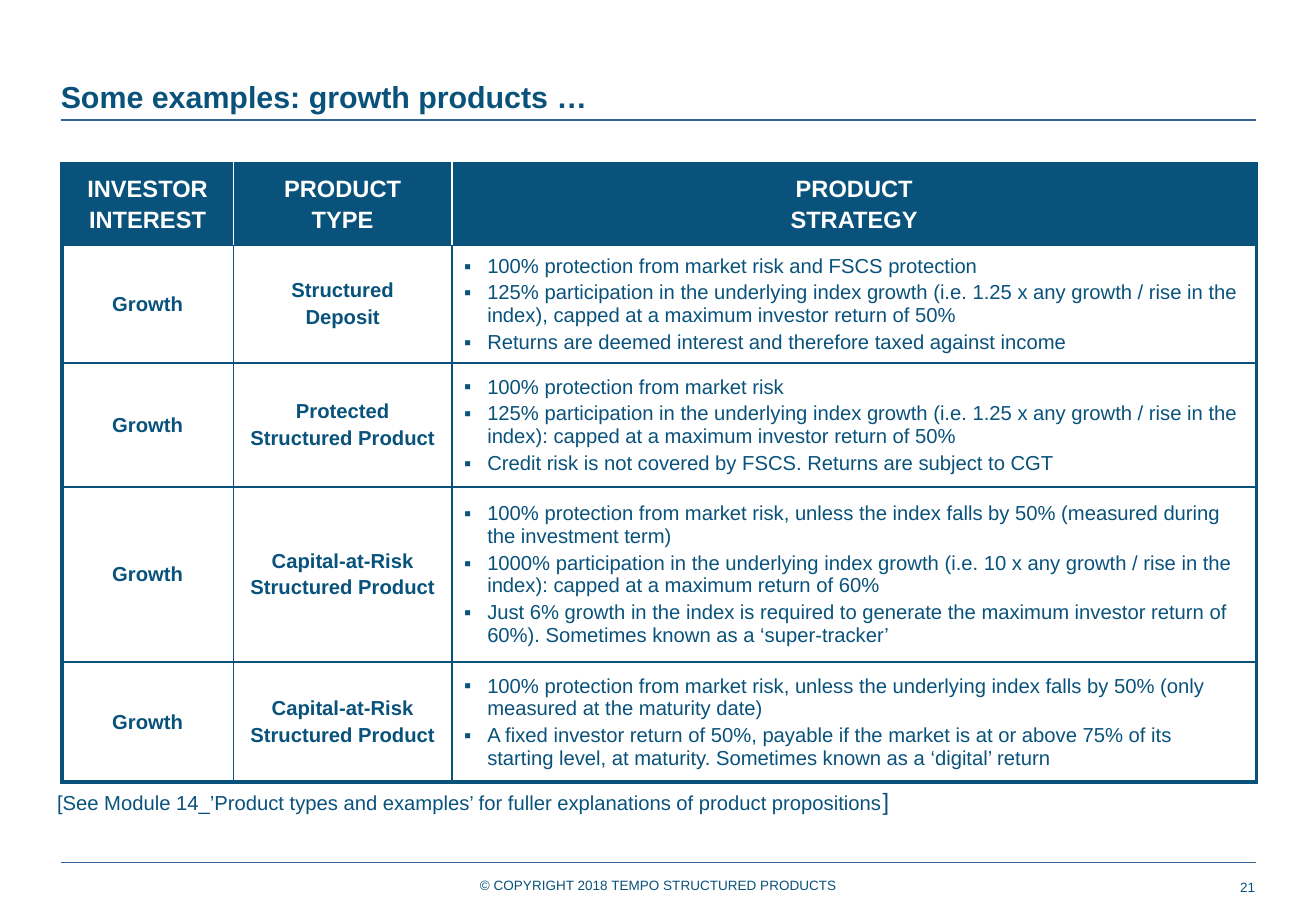
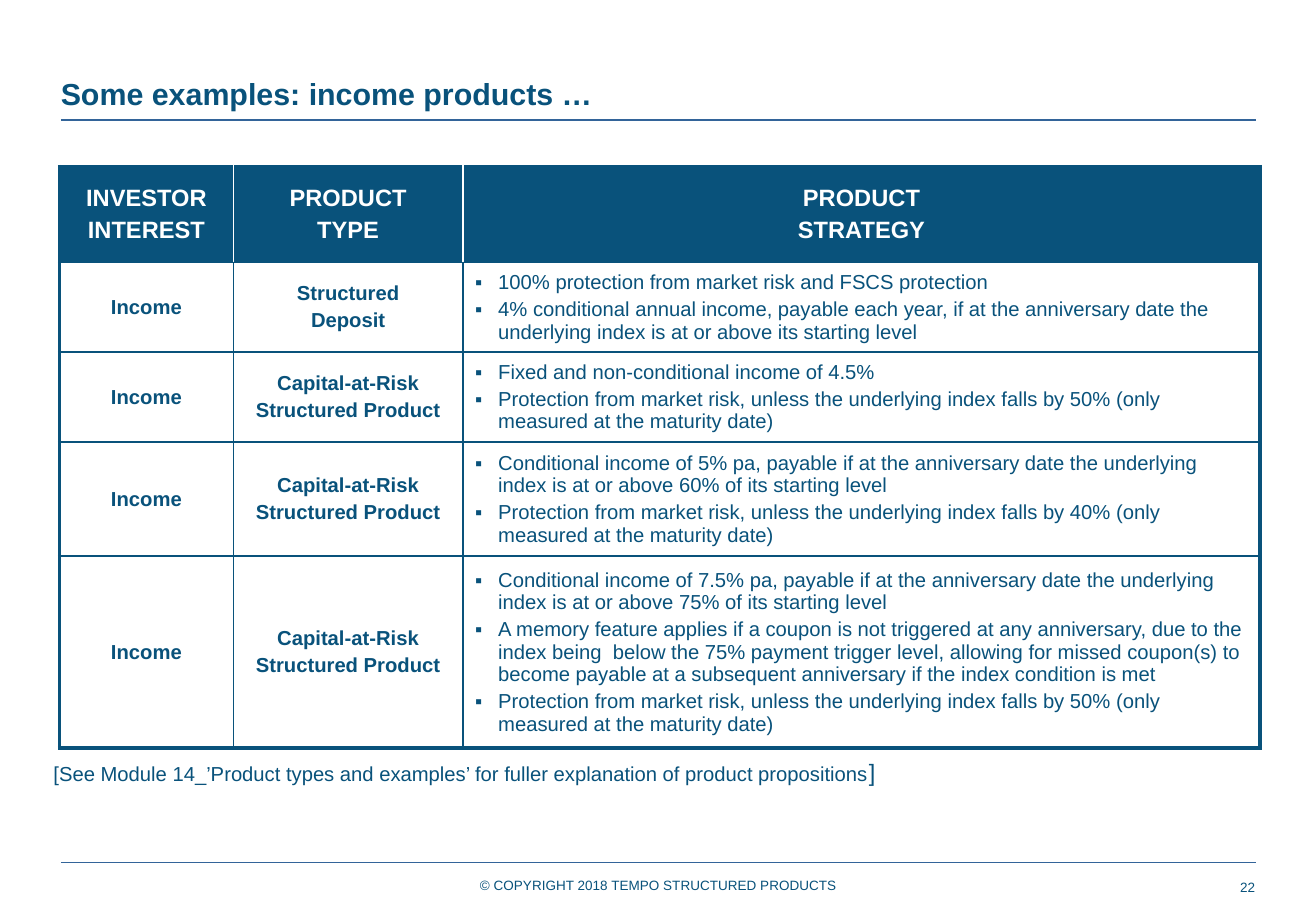
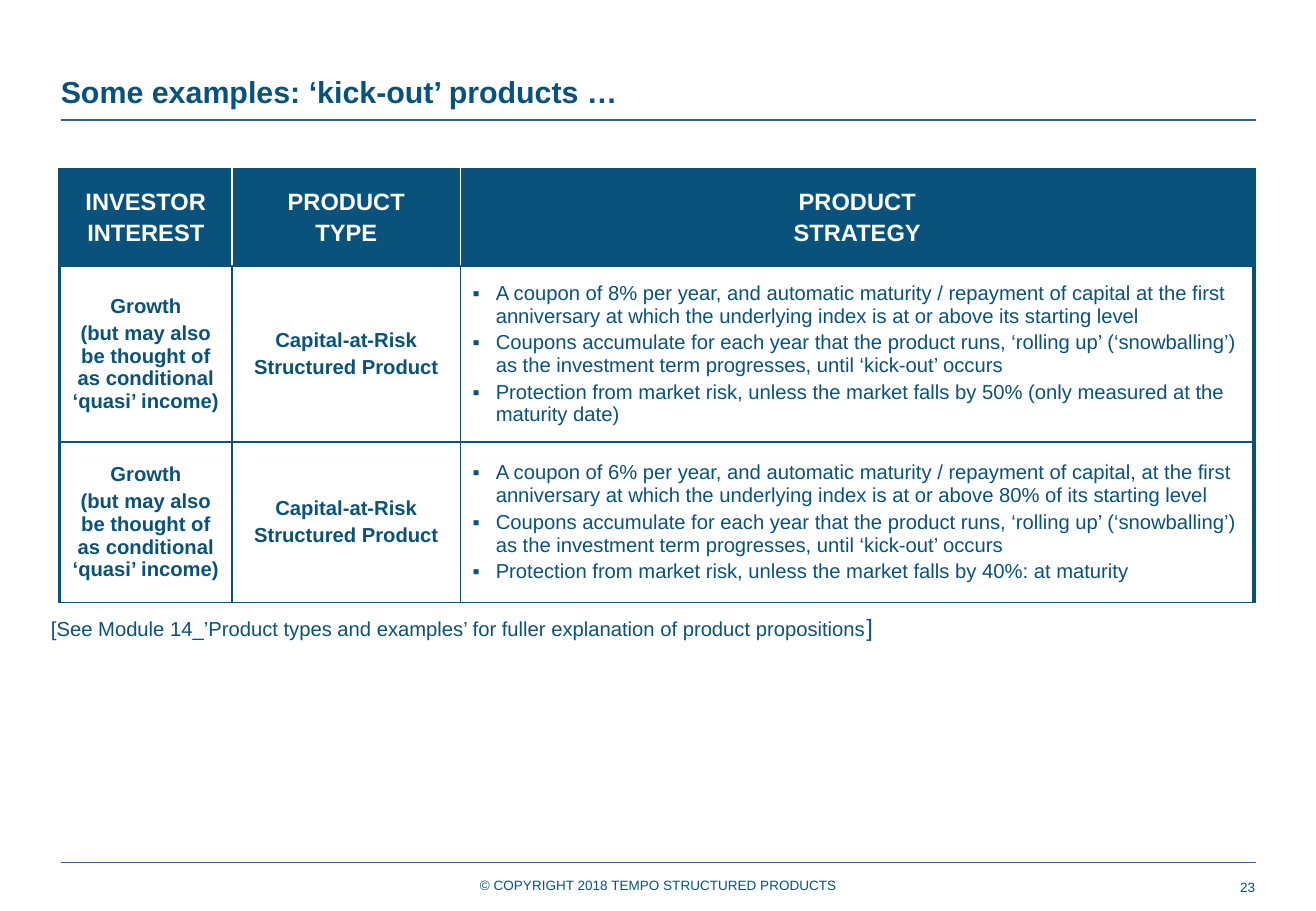
from dataclasses import dataclass

from lxml import etree
from pptx import Presentation
from pptx import util as u
from pptx.dml.color import RGBColor
from pptx.enum import shapes, text
from pptx.oxml.ns import qn


@dataclass(frozen=True)
class Theme:
    font: str = "Arial"
    navy: str = "09527B"
    rule: str = "336499"
    white: str = "FFFFFF"
    title: float = 18
    header: float = 14
    body: float = 12
    footer: float = 8
    thin: float = 1
    thick: float = 2.25
    before: float = 0.2     # space before a paragraph, as a share of its size
    indent: float = 1.9     # hanging indent of a bullet, in grid steps


THEME = Theme()
STEP = u.Inches(0.1)        # one column or row of the grid
LEFT, RIGHT = 5, 103.4      # page margins, in columns
COPYRIGHT = "© COPYRIGHT 2018 TEMPO STRUCTURED PRODUCTS"


def grid(*steps):
    return [round(step * STEP) for step in steps]


def apply(target, **values):
    for name, value in values.items():
        setattr(target, name, value)


class Deck:
    """Holds the theme and the slide being built."""

    def __init__(self, theme):
        self.theme = theme
        self.show = Presentation()
        apply(self.show, slide_width=u.Inches(10.83), slide_height=u.Inches(7.5))
        self.slide = None

    def new_slide(self, title, title_top, number):
        self.slide = self.show.slides.add_slide(self.show.slide_layouts[5])
        self.title(title, title_top)
        for row in (9.9, 71):
            self.rule(row)
        self.text((96.5, 72.2, 6.8, 1.6), str(number), self.theme.footer,
                  align=text.PP_ALIGN.RIGHT, anchor=text.MSO_ANCHOR.MIDDLE)
        self.text((39.5, 72.2, 29.6, 1.4), COPYRIGHT, self.theme.footer)

    def run(self, paragraph, words, size, color=None, bold=False):
        run = paragraph.add_run()
        run.text = words
        apply(run.font, name=self.theme.font, size=u.Pt(size), bold=bold)
        run.font.color.rgb = RGBColor.from_string(color or self.theme.navy)

    def frame(self, frame, anchor=text.MSO_ANCHOR.TOP):
        apply(frame, margin_left=0, margin_top=0, margin_right=0, margin_bottom=0,
              word_wrap=True, auto_size=text.MSO_AUTO_SIZE.NONE,
              vertical_anchor=anchor)
        return frame.paragraphs[0]

    def title(self, words, top):
        holder = self.slide.shapes.title
        left, top, width, height = grid(LEFT, top, 89, 3)
        apply(holder, left=left, top=top, width=width, height=height)
        paragraph = self.frame(holder.text_frame)
        paragraph.alignment = text.PP_ALIGN.LEFT
        self.run(paragraph, words, self.theme.title, bold=True)

    def text(self, place, words, size, align=text.PP_ALIGN.LEFT,
             anchor=text.MSO_ANCHOR.TOP):
        box = self.slide.shapes.add_textbox(*grid(*place))
        paragraph = self.frame(box.text_frame, anchor)
        paragraph.alignment = align
        self.run(paragraph, words, size)
        return paragraph

    def rule(self, row):
        line = self.slide.shapes.add_connector(
            shapes.MSO_CONNECTOR.STRAIGHT, *grid(LEFT, row, RIGHT, row))
        line.line.color.rgb = RGBColor.from_string(self.theme.rule)
        line.line.width = u.Pt(self.theme.thin)
        etree.SubElement(line._element.spPr, qn("a:effectLst"))

    def note(self, left, top, noun):
        words = f"[See Module 14_’Product types and examples’ for fuller {noun} of product propositions"
        paragraph = self.text((left, top, 96, 2.4), words, self.theme.body)
        self.run(paragraph, "]", self.theme.header)

    def borders(self, cell, **sides):
        properties = cell._tc.get_or_add_tcPr()
        for side, (color, width) in sides.items():
            line = etree.SubElement(properties, qn(f"a:ln{side}"), w=str(u.Pt(width)))
            fill = etree.SubElement(line, qn("a:solidFill"))
            etree.SubElement(fill, qn("a:srgbClr"), val=color)

    def bullet(self, paragraph):
        properties = paragraph._p.get_or_add_pPr()
        indent, = grid(self.theme.indent)
        properties.set("marL", str(indent))
        properties.set("indent", str(-indent))
        etree.SubElement(properties, qn("a:buFont"), typeface=self.theme.font)
        etree.SubElement(properties, qn("a:buChar"), char="▪")

    def cell(self, cell, lines, header, bulleted):
        theme = self.theme
        size = theme.header if header else theme.body
        cell.fill.solid()
        cell.fill.fore_color.rgb = RGBColor.from_string(
            theme.navy if header else theme.white)
        cell.vertical_anchor = text.MSO_ANCHOR.MIDDLE
        for index, words in enumerate(lines):
            paragraph = (cell.text_frame.add_paragraph() if index
                         else cell.text_frame.paragraphs[0])
            paragraph.space_before = u.Pt(size * theme.before if index else 0)
            if bulleted:
                self.bullet(paragraph)
            else:
                paragraph.alignment = text.PP_ALIGN.CENTER
            self.run(paragraph, words, size, theme.white if header else theme.navy,
                     bold=not bulleted)

    def table(self, left, top, columns, heights, rows, closing):
        theme = self.theme
        table = self.slide.shapes.add_table(
            len(rows), len(columns),
            *grid(left, top, sum(columns), sum(heights))).table
        apply(table, first_row=False, horz_banding=False)
        for column, width in zip(table.columns, grid(*columns)):
            column.width = width
        for row, height in zip(table.rows, grid(*heights)):
            row.height = height
        last_row, last_column = len(rows) - 1, len(columns) - 1
        for r, row in enumerate(rows):
            inner = (theme.navy if r else theme.white, theme.thin)
            outer = (theme.navy, theme.thick)
            between = (theme.navy, theme.thin)
            for c, lines in enumerate(row):
                cell = table.cell(r, c)
                self.borders(cell, L=inner if c else outer,
                             R=inner if c < last_column else outer,
                             T=between if r else outer,
                             B=between if r < last_row else (theme.navy, closing))
                self.cell(cell, lines, header=r == 0,
                          bulleted=r > 0 and c == last_column)


# Wording used more than once
HEADER = (("INVESTOR", "INTEREST"), ("PRODUCT", "TYPE"), ("PRODUCT", "STRATEGY"))
GROWTH, INCOME = ("Growth",), ("Income",)
QUASI = ("Growth", "(but may also be thought of as conditional ‘quasi’ income)")
DEPOSIT = ("Structured", "Deposit")
PROTECTED = ("Protected", "Structured Product")
AT_RISK = ("Capital-at-Risk", "Structured Product")
FSCS = "100% protection from market risk and FSCS protection"
SNOWBALL = ("Coupons accumulate for each year that the product runs, ‘rolling up’ "
            "(‘snowballing’) as the investment term progresses, until ‘kick-out’ occurs")


def participation(ending):
    return ("125% participation in the underlying index growth (i.e. 1.25 x any growth "
            f"/ rise in the index){ending} capped at a maximum investor return of 50%")


def protection(fall):
    return (f"Protection from market risk, unless the underlying index falls by {fall} "
            "(only measured at the maturity date)")


def conditional(rate, level):
    return (f"Conditional income of {rate} pa, payable if at the anniversary date the "
            f"underlying index is at or above {level} of its starting level")


def coupon(rate, comma, level):
    return (f"A coupon of {rate} per year, and automatic maturity / repayment of "
            f"capital{comma} at the first anniversary at which the underlying index "
            f"is at or above {level}its starting level")


GROWTH_ROWS = (
    (GROWTH, DEPOSIT, (
        FSCS, participation(","),
        "Returns are deemed interest and therefore taxed against income")),
    (GROWTH, PROTECTED, (
        "100% protection from market risk", participation(":"),
        "Credit risk is not covered by FSCS. Returns are subject to CGT")),
    (GROWTH, AT_RISK, (
        "100% protection from market risk, unless the index falls by 50% (measured "
        "during the investment term)",
        "1000% participation in the underlying index growth (i.e. 10 x any growth / "
        "rise in the index): capped at a maximum return of 60%",
        "Just 6% growth in the index is required to generate the maximum investor "
        "return of 60%). Sometimes known as a ‘super-tracker’")),
    (GROWTH, AT_RISK, (
        "100% protection from market risk, unless the underlying index falls by 50% "
        "(only measured at the maturity date)",
        "A fixed investor return of 50%, payable if the market is at or above 75% of "
        "its starting level, at maturity. Sometimes known as a ‘digital’ return")),
)

INCOME_ROWS = (
    (INCOME, DEPOSIT, (
        FSCS,
        "4% conditional annual income, payable each year, if at the anniversary date "
        "the underlying index is at or above its starting level")),
    (INCOME, AT_RISK, (
        "Fixed and non-conditional income of 4.5%", protection("50%"))),
    (INCOME, AT_RISK, (conditional("5%", "60%"), protection("40%"))),
    (INCOME, AT_RISK, (
        conditional("7.5%", "75%"),
        "A memory feature applies if a coupon is not triggered at any anniversary, due "
        "to the index being  below the 75% payment trigger level, allowing for missed "
        "coupon(s) to become payable at a subsequent anniversary if the index "
        "condition is met",
        protection("50%"))),
)

KICK_OUT_ROWS = (
    (QUASI, AT_RISK, (
        coupon("8%", "", ""), SNOWBALL,
        "Protection from market risk, unless the market falls by 50% (only measured "
        "at the maturity date)")),
    (QUASI, AT_RISK, (
        coupon("6%", ",", "80% of "), SNOWBALL,
        "Protection from market risk, unless the market falls by 40%: at maturity")),
)


def main():
    deck = Deck(THEME)

    # Growth products
    deck.new_slide("Some examples: growth products …", 6.4, 21)
    deck.table(5.1, 13.5, (14.1, 18, 66.2), (6.7, 9.7, 10.2, 14.4, 9.9),
               (HEADER, *GROWTH_ROWS), THEME.thick)
    deck.note(4.7, 64.8, "explanations")

    # Income products
    deck.new_slide("Some examples: income products …", 6.2, 22)
    deck.table(4.9, 13.7, (14.3, 18.9, 65.6), (7.9, 7.4, 7.4, 9.4, 15.8),
               (HEADER, *INCOME_ROWS), THEME.thick)
    deck.note(4.4, 62.4, "explanation")

    # Kick-out products
    deck.new_slide("Some examples: ‘kick-out’ products …", 6, 23)
    deck.table(4.9, 14, (14.2, 18.8, 65.3), (7.9, 14.5, 13.2),
               (HEADER, *KICK_OUT_ROWS), THEME.thin)
    deck.note(4.2, 50.5, "explanation")

    deck.show.save("out.pptx")


if __name__ == "__main__":
    main()
